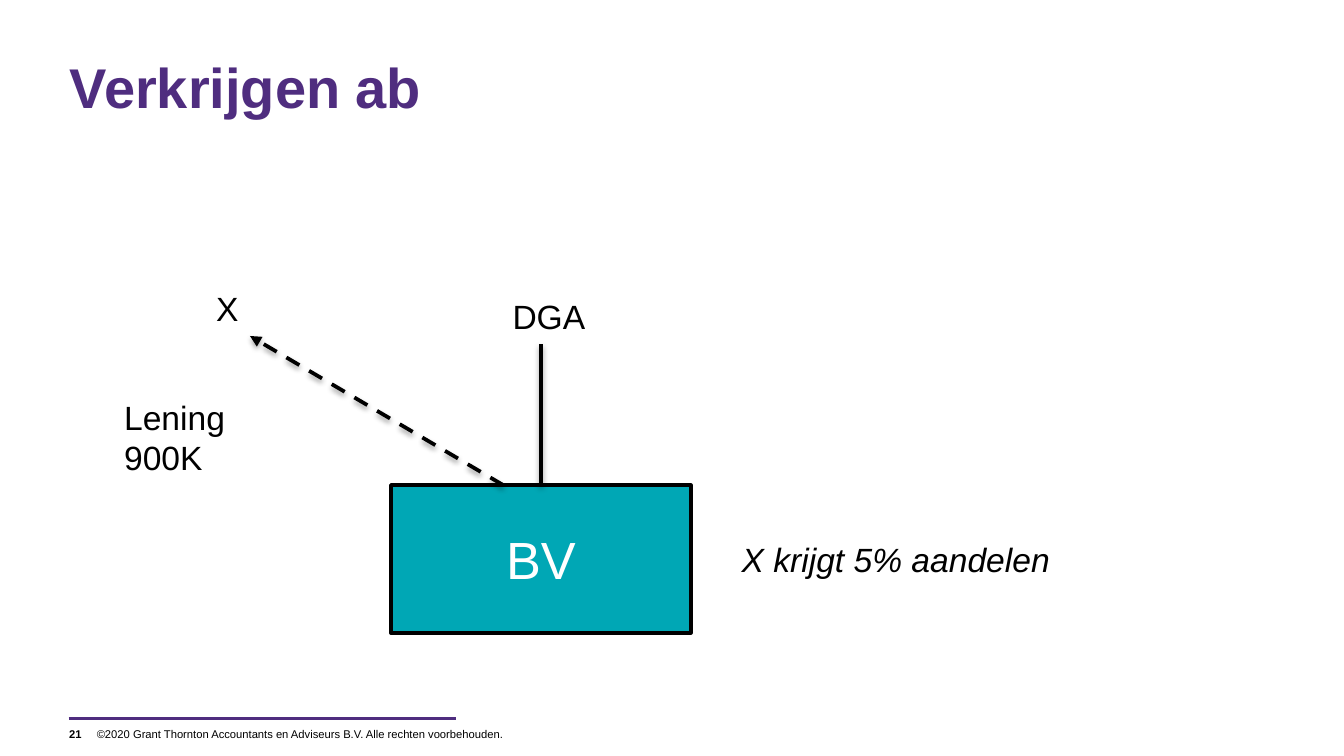
from lxml import etree
from pptx import Presentation
from pptx.dml.color import RGBColor
from pptx.enum.dml import MSO_LINE
from pptx.enum.shapes import MSO_CONNECTOR, MSO_SHAPE
from pptx.enum.text import MSO_ANCHOR, MSO_AUTO_SIZE, PP_ALIGN
from pptx.oxml import parse_xml
from pptx.oxml.ns import nsdecls, qn
from pptx.util import Pt

PX = 4572
PURPLE, TEAL, BLACK, WHITE = "4F2D7F", "00A7B5", "000000", "FFFFFF"
SHADOW = (
    f'<a:effectLst {nsdecls("a")}>'
    '<a:outerShdw blurRad="39370" dist="20320" dir="5400000" rotWithShape="0">'
    '<a:srgbClr val="000000"><a:alpha val="38000"/></a:srgbClr>'
    '</a:outerShdw></a:effectLst>'
)


def px(*values):
    return [round(v * PX) for v in values]


def rgb(color):
    return RGBColor.from_string(color)


def set_text(shape, text, size, color=BLACK, bold=False, italic=False,
             align=PP_ALIGN.LEFT, anchor=MSO_ANCHOR.TOP, insets=(20, 10)):
    tf = shape.text_frame
    tf.word_wrap = True
    tf.vertical_anchor = anchor
    tf.margin_left, tf.margin_top = px(*insets)
    tf.margin_right, tf.margin_bottom = px(*insets)
    p = tf.paragraphs[0]
    p.text = text
    p.alignment = align
    font = p.font
    font.name, font.size = "Arial", Pt(size)
    font.bold, font.italic = bold, italic
    font.color.rgb = rgb(color)
    return tf


def add_label(s, box, text, size=18, **style):
    tb = s.shapes.add_textbox(*px(*box))
    return set_text(tb, text, size, **style)


def add_line(s, start, end, color=BLACK, width=2, shadow=True):
    line = s.shapes.add_connector(MSO_CONNECTOR.STRAIGHT, *px(*start, *end))
    line.line.color.rgb = rgb(color)
    line.line.width = Pt(width)
    sp_pr = line._element.spPr
    if shadow:
        sp_pr.append(parse_xml(SHADOW))
    else:
        etree.SubElement(sp_pr, qn("a:effectLst"))
    return line


def add_title(s, box, text):
    title = s.shapes.title
    title.left, title.top, title.width, title.height = px(*box)
    tf = set_text(title, text, 30, PURPLE, bold=True, insets=(0, 0))
    tf.auto_size = MSO_AUTO_SIZE.NONE


def add_footer(s, box, number, text):
    x, y, w, h = box
    add_line(s, (x, y), (x + 576, y), PURPLE, 1.5, shadow=False)
    add_label(s, (x + 1, y + 4, 40, h), number, 6, bold=True,
              anchor=MSO_ANCHOR.MIDDLE, insets=(0, 0))
    add_label(s, (x + 42, y + 4, w - 42, h), text, 6,
              anchor=MSO_ANCHOR.MIDDLE, insets=(0, 10))


def add_structure(s, box):
    x, y, w, h = box
    bv_x, bv_y, bv_w, bv_h = x + 416, y + 302, 446, 220
    bv = s.shapes.add_shape(MSO_SHAPE.RECTANGLE, *px(bv_x, bv_y, bv_w, bv_h))
    bv.shadow.inherit = False
    bv.fill.solid()
    bv.fill.fore_color.rgb = rgb(TEAL)
    bv.line.color.rgb = rgb(BLACK)
    bv.line.width = Pt(2)
    set_text(bv, "BV", 28, WHITE, align=PP_ALIGN.CENTER,
             anchor=MSO_ANCHOR.MIDDLE)

    center = bv_x + bv_w / 2
    holding = add_line(s, (center, bv_y), (center, y + 92))
    holding.begin_connect(bv, 0)

    loan = add_line(s, (center - 56, bv_y), (x + 206, y + 80))
    loan.line.dash_style = MSO_LINE.DASH
    etree.SubElement(loan.line._get_or_add_ln(), qn("a:tailEnd"),
                     type="triangle")

    add_label(s, (x + 577, y + 11, 222, 80), "DGA")
    add_label(s, (x + 136, y - 1, 140, 80), "X")
    add_label(s, (x - 1, y + 161, 208, 142), "Lening 900K")
    add_label(s, (x + w - 524, y + 372, 524, 80), "X krijgt 5% aandelen",
              italic=True)


def main():
    prs = Presentation()
    prs.slide_width, prs.slide_height = px(2000, 1125)
    s = prs.slides.add_slide(prs.slide_layouts[5])
    add_title(s, (104, 78, 1794, 184), "Verkrijgen ab")
    add_structure(s, (166, 420, 1442, 522))
    add_footer(s, (102, 1069, 700, 40), "21",
               "©2020 Grant Thornton Accountants en Adviseurs B.V. "
               "Alle rechten voorbehouden.")
    prs.save("out.pptx")


if __name__ == "__main__":
    main()
